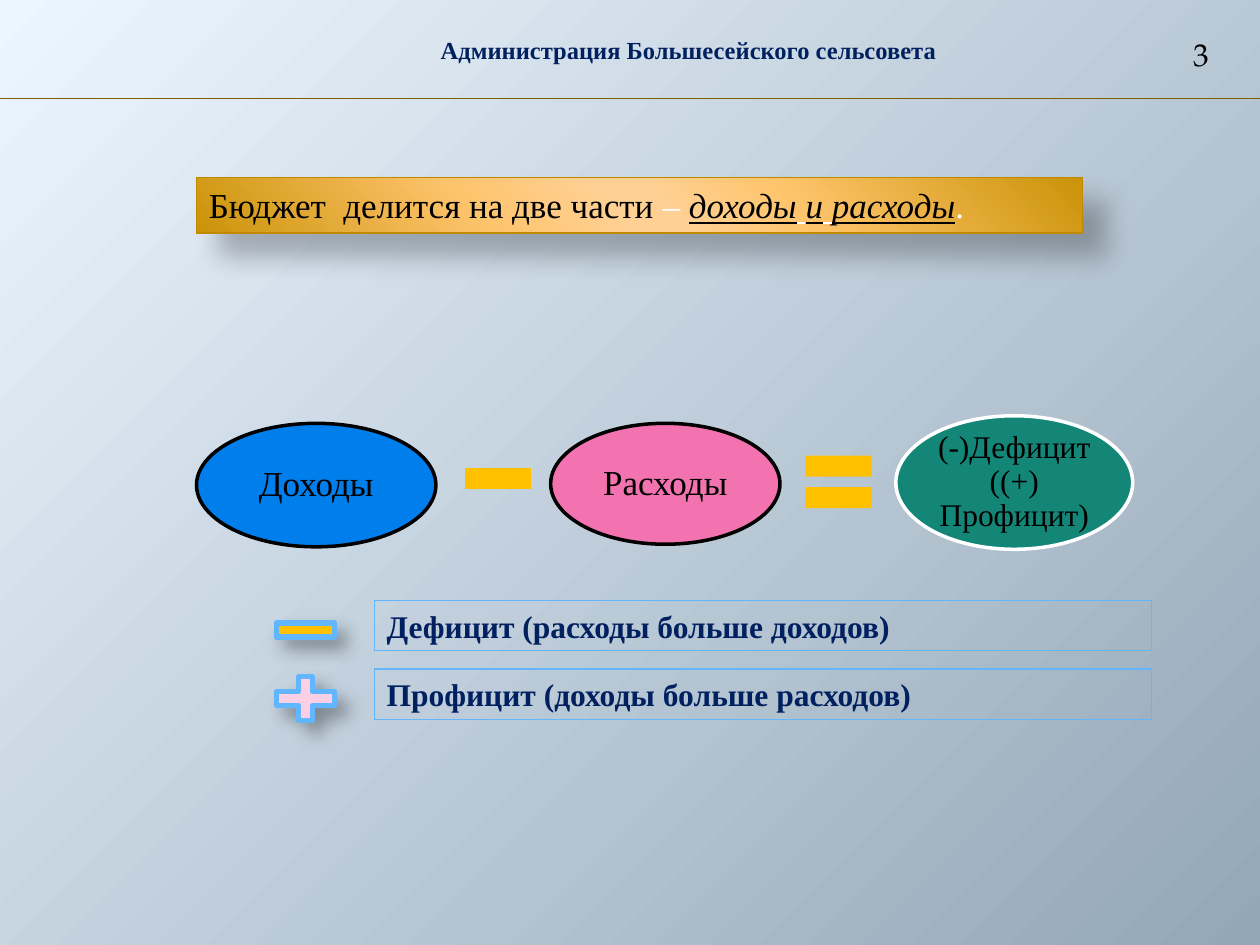
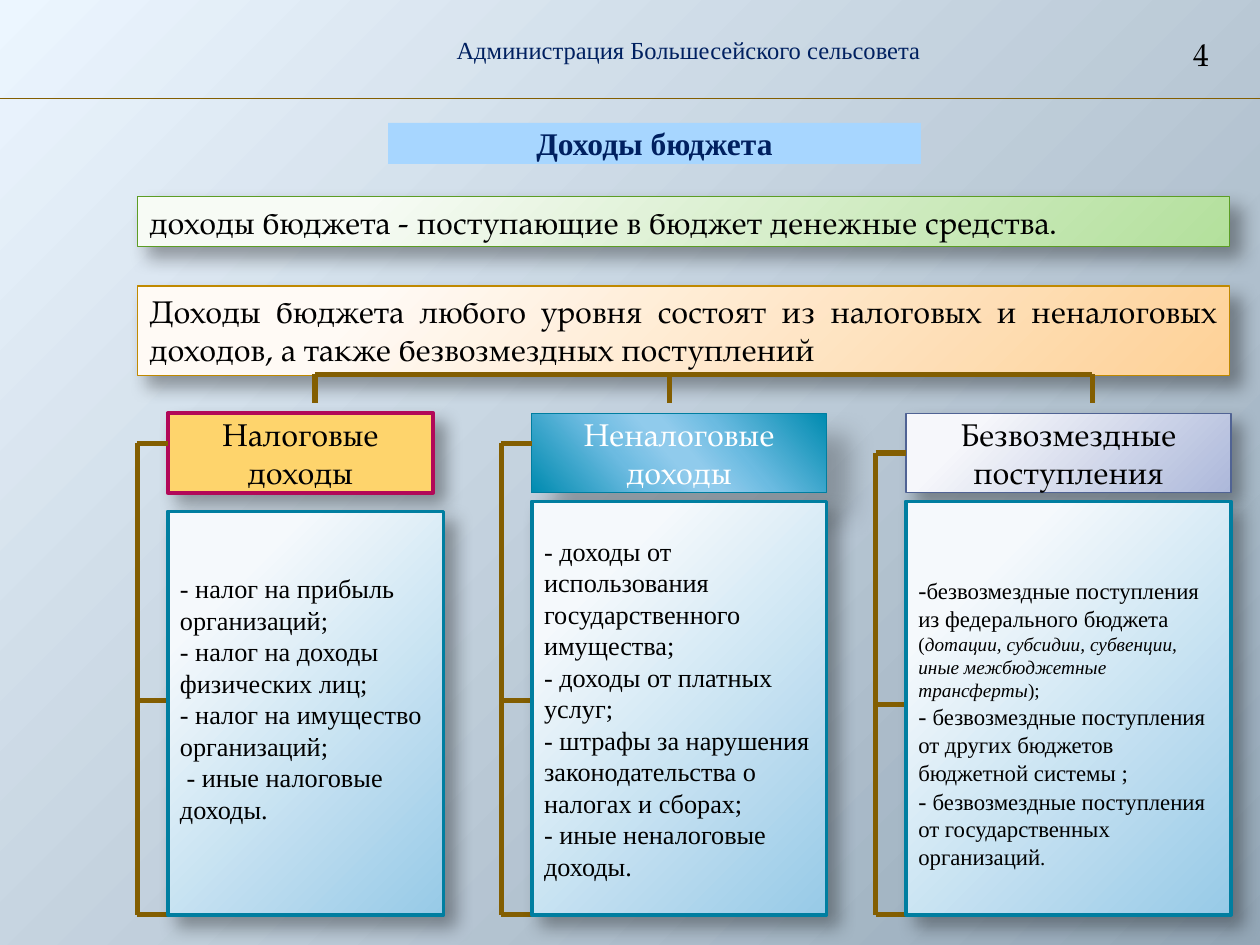
import dataclasses

import lxml.etree
import pptx
import pptx.dml.color
import pptx.enum.dml
import pptx.enum.shapes
import pptx.enum.text
import pptx.oxml.ns
import pptx.util

RGB = pptx.dml.color.RGBColor
SHAPE = pptx.enum.shapes.MSO_SHAPE
ALIGN = pptx.enum.text.PP_ALIGN
ANCHOR = pptx.enum.text.MSO_ANCHOR
Pt = pptx.util.Pt
qn = pptx.oxml.ns.qn

COLUMNS, ROWS = 100, 75
CELL = pptx.util.Inches(0.1)

BLACK = RGB(0x00, 0x00, 0x00)
WHITE = RGB(0xFF, 0xFF, 0xFF)
NAVY = RGB(0x00, 0x20, 0x60)
BROWN = RGB(0x83, 0x5E, 0x01)
AMBER = RGB(0xFF, 0xC0, 0x00)
GOLD = RGB(0xC0, 0x89, 0x00)
YELLOW = RGB(0xFE, 0xD4, 0x6C)
SKY = RGB(0x61, 0xB6, 0xFF)
PALE_BLUE = RGB(0xA7, 0xD6, 0xFF)
BLUE = RGB(0x00, 0x7E, 0xEB)
PINK = RGB(0xF2, 0x73, 0xAF)
PALE_PINK = RGB(0xFB, 0xD0, 0xE4)
GREEN = RGB(0x13, 0x86, 0x77)
LEAF = RGB(0x5C, 0x9D, 0x25)
CRIMSON = RGB(0xB2, 0x08, 0x58)
TEAL = RGB(0x00, 0x7E, 0xA0)
SLATE = RGB(0x50, 0x63, 0x94)

SERIF = "Times New Roman"
BOOK = "TeX Gyre Pagella"


@dataclasses.dataclass(frozen=True)
class Gradient:
    """Stops as (percent, colour); linear when an angle is given, else circular."""
    stops: tuple
    angle: int = None
    focus: tuple = (-15, -15, 115, 115)


def glow(start, end):
    return Gradient(((20, start), (100, end)))


def sheen(*colours):
    return Gradient(tuple(zip((0, 33, 47, 53, 68, 100), colours)), angle=139)


BACKDROP = Gradient(((0, "ECF6FF"), (100, "94A7B7")), focus=(0, 0, 100, 100))
GOLD_SHEEN = sheen("CB9308", "FEC46B", "FFD094", "FFD094", "FEC46D", "CB9308")
TEAL_SHEEN = sheen("008BB0", "6BBBE1", "90CBEC", "90CBEC", "6CBBE1", "008BB0")
GREEN_GLOW = glow("F7FBF5", "B3E09C")
PEACH_GLOW = glow("FFFAF5", "FED197")
LILAC_GLOW = glow("F6F7FB", "ADB8DA")
ICE_GLOW = glow("F5F9FC", "97CAE7")

# Shadows: opacity in percent, blur and distance in points
NEAR = (35, 10.2, 8)
FAR = (26, 15, 18)


@dataclasses.dataclass(frozen=True)
class Font:
    size: int = 18
    name: str = SERIF
    colour: RGB = BLACK
    bold: bool = False
    italic: bool = False
    underline: bool = False

    def apply(self, run):
        font = run.font
        font.size, font.name = Pt(self.size), self.name
        font.bold, font.italic, font.underline = self.bold, self.italic, self.underline
        font.color.rgb = self.colour


BODY = Font(15)
BOOK_TEXT = Font(name=BOOK)
NAVY_BOLD = Font(colour=NAVY, bold=True)


def add_xml(parent, tag, **attributes):
    return lxml.etree.SubElement(
        parent, qn(tag), {key: str(value) for key, value in attributes.items()})


def paint_gradient(fill, owner, gradient):
    fill.gradient()
    element = owner.find(".//" + qn("a:gradFill"))
    for child in list(element):
        element.remove(child)
    stops = add_xml(element, "a:gsLst")
    for percent, colour in gradient.stops:
        add_xml(add_xml(stops, "a:gs", pos=percent * 1000), "a:srgbClr", val=colour)
    if gradient.angle is not None:
        add_xml(element, "a:lin", ang=gradient.angle * 60000, scaled=1)
    else:
        left, top, right, bottom = (share * 1000 for share in gradient.focus)
        add_xml(add_xml(element, "a:path", path="circle"),
                "a:fillToRect", l=left, t=top, r=right, b=bottom)


class Deck:
    """Holds the shared style and the current slide; places are in grid cells."""

    def __init__(self):
        self.presentation = pptx.Presentation()
        self.presentation.slide_width = COLUMNS * CELL
        self.presentation.slide_height = ROWS * CELL
        self.slide = None

    def cells(self, *lengths):
        return [round(length * CELL) for length in lengths]

    def start_slide(self, number, bold_header):
        self.slide = self.presentation.slides.add_slide(
            self.presentation.slide_layouts[6])
        paint_gradient(self.slide.background.fill, self.slide._element, BACKDROP)
        self.label((10.9, 2.3, 87.5, 3.4), "Администрация Большесейского сельсовета",
                   Font(14, colour=NAVY, bold=bold_header))
        self.line((0, 7.8), (COLUMNS, 7.8), 0.75)
        self.label((93, 2.3, 4.7, 4), str(number), BOOK_TEXT)

    def set_text(self, frame, text, font, align=ALIGN.LEFT, anchor=ANCHOR.TOP):
        """Text is a string, or paragraphs that are strings or lists of (words, font)."""
        frame.word_wrap = True
        frame.vertical_anchor = anchor
        for index, content in enumerate([text] if isinstance(text, str) else text):
            paragraph = frame.add_paragraph() if index else frame.paragraphs[0]
            paragraph.alignment = align
            pieces = [(content, font)] if isinstance(content, str) else content
            for words, piece_font in pieces:
                run = paragraph.add_run()
                run.text = words
                piece_font.apply(run)

    def label(self, place, text, font):
        box = self.slide.shapes.add_textbox(*self.cells(*place))
        self.set_text(box.text_frame, text, font, ALIGN.CENTER)

    def shape(self, kind, place, fill=None, line=None, width=0.75, shadow=None):
        shape = self.slide.shapes.add_shape(kind, *self.cells(*place))
        if isinstance(fill, Gradient):
            paint_gradient(shape.fill, shape._element, fill)
        elif fill is None:
            shape.fill.background()
        else:
            shape.fill.solid()
            shape.fill.fore_color.rgb = fill
        if line is None:
            shape.line.fill.background()
        else:
            shape.line.color.rgb = line
            shape.line.width = Pt(width)
        shape.shadow.inherit = False
        if shadow:
            opacity, blur, distance = shadow
            outer = add_xml(shape._element.spPr.find(qn("a:effectLst")), "a:outerShdw",
                            blurRad=Pt(blur), dist=Pt(distance), dir=45 * 60000,
                            algn="tl", rotWithShape=0)
            add_xml(add_xml(outer, "a:srgbClr", val="000000"),
                    "a:alpha", val=opacity * 1000)
        return shape

    def panel(self, place, text, font, align=ALIGN.LEFT, anchor=ANCHOR.TOP, **look):
        panel = self.shape(SHAPE.RECTANGLE, place, **look)
        self.set_text(panel.text_frame, text, font, align, anchor)
        return panel

    def oval(self, place, text, size, fill, line):
        frame = self.shape(SHAPE.OVAL, place, fill, line, 2).text_frame
        frame.margin_left = frame.margin_right = Pt(2)
        frame.margin_top = frame.margin_bottom = Pt(2)
        self.set_text(frame, text, Font(size), ALIGN.CENTER, ANCHOR.MIDDLE)
        frame.paragraphs[0].line_spacing = 0.9

    def line(self, start, end, width=3):
        line = self.slide.shapes.add_connector(
            pptx.enum.shapes.MSO_CONNECTOR.STRAIGHT, *self.cells(*start, *end))
        line.line.color.rgb = BROWN
        line.line.width = Pt(width)
        add_xml(line._element.spPr, "a:effectLst")
        return line

    def bracket(self, left, ticks, head):
        """Joins the given rows to a spine left of a column."""
        spine = left - 2.4
        self.line((spine, ticks[-1]), (spine, ticks[0]))
        for row in ticks:
            tick = self.line((spine, row), (left, row))
            if abs(row * CELL - head.top - head.height / 2) < CELL / 20:
                tick.end_connect(head, 1)


def build_balance_slide(deck):
    deck.start_slide(3, bold_header=True)
    plain, pale = Font(20), Font(20, colour=WHITE)
    term = Font(20, italic=True, underline=True)
    gap = dataclasses.replace(term, colour=WHITE)
    sentence = [("Бюджет  делится на две части", plain), (" – ", pale),
                ("доходы", term), (" ", gap), ("и", term), (" ", gap),
                ("расходы", term), (".", pale)]
    deck.panel((15.6, 14.1, 70.3, 4.4), [sentence], plain,
               fill=GOLD_SHEEN, line=GOLD, shadow=FAR)

    deck.oval((15.6, 33.6, 19, 9.8), "Доходы", 20, BLUE, BLACK)
    deck.shape(SHAPE.MATH_MINUS, (36, 34.4, 7.1, 7.1), AMBER)
    deck.oval((43.7, 33.6, 18.2, 9.6), "Расходы", 20, PINK, BLACK)
    deck.shape(SHAPE.MATH_EQUAL, (63, 34.7, 7.1, 7.1), AMBER)
    deck.oval((71.1, 33, 18.8, 10.6), "(-)Дефицит ((+) Профицит)", 18, GREEN, WHITE)

    legend = ((SHAPE.MATH_MINUS, AMBER, "Дефицит (расходы больше доходов)"),
              (SHAPE.MATH_PLUS, PALE_PINK, "Профицит (доходы больше расходов)"))
    for index, (sign, colour, meaning) in enumerate(legend):
        top = 47.65 + 5.45 * index
        deck.shape(sign, (21.1, top, 6.3, 4.7), colour, SKY, 3, NEAR)
        deck.panel((29.7, top, 61.7, 4), meaning, NAVY_BOLD, line=SKY)


def build_income_slide(deck):
    deck.start_slide(4, bold_header=False)
    deck.panel((10.9, 15.6, 86.7, 4),
               "доходы бюджета - поступающие в бюджет денежные средства.",
               BOOK_TEXT, ALIGN.JUSTIFY, fill=GREEN_GLOW, line=LEAF, shadow=NEAR)
    deck.panel((30.8, 9.75, 42.3, 3.25), "Доходы бюджета", NAVY_BOLD,
               ALIGN.CENTER, ANCHOR.MIDDLE, fill=PALE_BLUE)
    deck.panel((10.9, 22.7, 86.7, 7.1),
               "Доходы бюджета любого уровня состоят из налоговых и неналоговых "
               "доходов, а также безвозмездных поступлений",
               BOOK_TEXT, ALIGN.JUSTIFY, fill=PEACH_GLOW, line=GOLD, shadow=NEAR)

    branches = (25, 53.15, 86.7)
    deck.line((branches[0], 29.7), (branches[-1], 29.7))
    for column in branches:
        deck.line((column, 29.7), (column, 32))

    dash, item, small = Font(14), Font(13), Font(11)
    slanted = Font(11, italic=True)
    taxes = ["- налог на прибыль организаций;", "- налог на доходы физических лиц;",
             "- налог на имущество организаций;", " - иные налоговые доходы."]
    other_income = ["- доходы от использования государственного имущества;",
                    "- доходы от платных услуг;",
                    "- штрафы за нарушения законодательства о налогах и сборах;",
                    "- иные неналоговые доходы."]
    grants = [
        [("-", dash), ("безвозмездные поступления из федерального бюджета ", item),
         ("(", small), ("дотации, субсидии, субвенции,", slanted)],
        [("иные межбюджетные трансферты", slanted), (");", small)],
        [("- ", dash),
         ("безвозмездные поступления от других бюджетов бюджетной системы ;", item)],
        [("- ", dash), ("безвозмездные поступления от государственных организаций", item),
         (".", Font(12))]]

    # Left, head width, body width, body top, bracket rows, head, head look, body
    sources = (
        (13.3, 21.1, 21.9, 40.6, (35.2, 55.6, 72.6), "Налоговые доходы", BOOK_TEXT,
         dict(fill=YELLOW, line=CRIMSON, width=2.25, shadow=NEAR), taxes),
        (42.2, 23.4, 23.4, 39.8, (35.2, 55.6, 72.6), "Неналоговые доходы",
         Font(name=BOOK, colour=WHITE),
         dict(fill=TEAL_SHEEN, line=TEAL, shadow=FAR), other_income),
        (71.9, 25.8, 25.8, 39.8, (35.95, 55.9, 72.6), "Безвозмездные поступления",
         BOOK_TEXT, dict(fill=LILAC_GLOW, line=SLATE, shadow=NEAR), grants))
    bodies = []
    for left, head_width, width, top, ticks, title, font, look, items in sources:
        head = deck.panel((left, 32.8, head_width, 6.3), title, font,
                          ALIGN.CENTER, ANCHOR.MIDDLE, **look)
        deck.bracket(left, ticks, head)
        bodies.append(deck.panel((left, top, width, 72.6 - top), items, BODY,
                                 anchor=ANCHOR.MIDDLE, fill=ICE_GLOW, line=TEAL,
                                 width=2.25, shadow=NEAR))
    bodies[0].text_frame.margin_bottom = Pt(20)
    bodies[2].text_frame.margin_top = Pt(20)


def main():
    deck = Deck()
    build_balance_slide(deck)
    build_income_slide(deck)
    deck.presentation.save("out.pptx")


if __name__ == "__main__":
    main()
